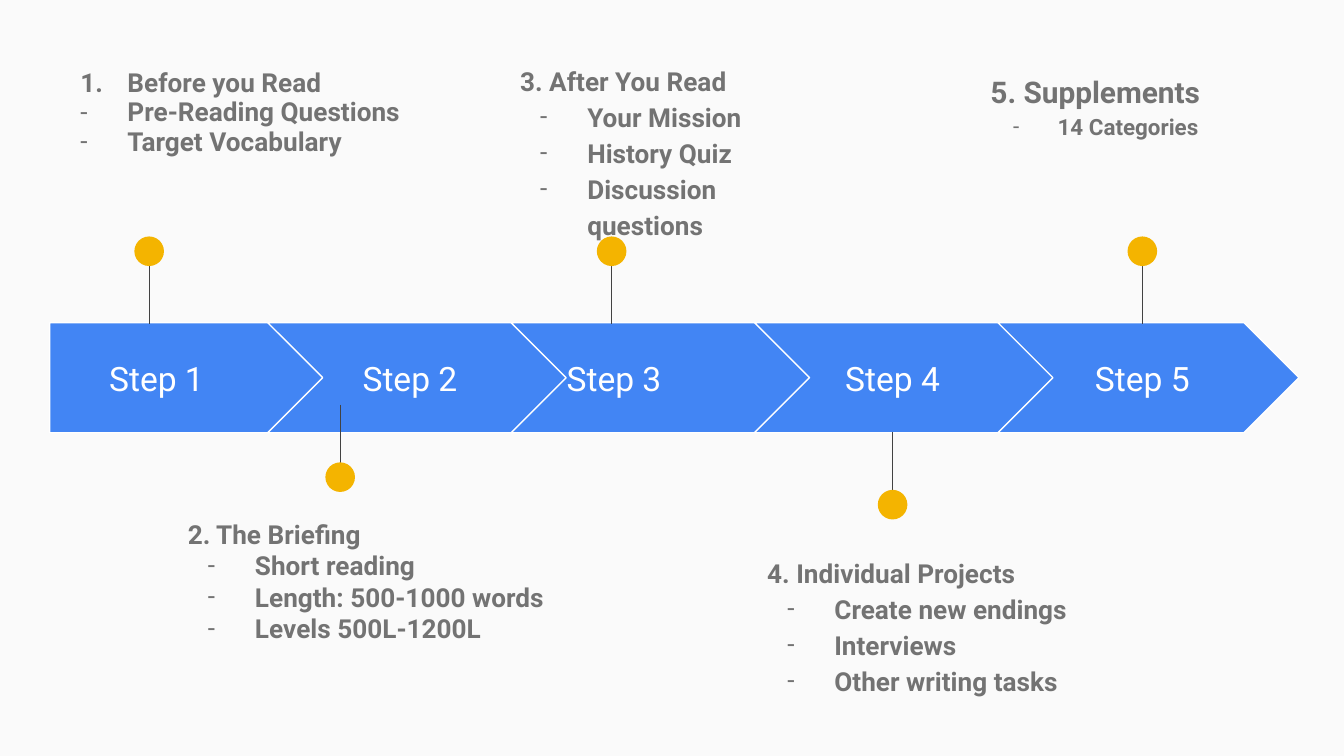
from dataclasses import dataclass

from lxml.etree import SubElement
from pptx import Presentation
from pptx.dml.color import RGBColor
from pptx.enum.shapes import MSO_CONNECTOR, MSO_SHAPE
from pptx.enum.text import MSO_ANCHOR, PP_ALIGN
from pptx.oxml.ns import qn
from pptx.util import Cm, Pt


@dataclass(frozen=True)
class Theme:
    back: str = "FAFAFA"
    blue: str = "4285F4"
    gold: str = "F4B400"
    white: str = "FFFFFF"
    stem: str = "424242"
    text: str = "737373"
    font: str = "Roboto"
    step: float = 18
    note: float = 14
    large: float = 16
    small: float = 12
    line: float = 0.75


THEME = Theme()
DOT = 0.56  # pin head, cm

# Per step: label x, label width, label align, pin x, pin top, pin points up, note
CENTER, LEFT = PP_ALIGN.CENTER, PP_ALIGN.LEFT
STEPS = [
    (0.94, 4.04, CENTER, 2.82, 4.47, True,
     dict(box=(0.89, 1.04, 6.96, 2.51), head="Before you Read", number=True, space=0.95,
          items=["Pre-Reading Questions", "Target Vocabulary"])),
    (5.92, 3.66, CENTER, 6.43, 7.65, False,
     dict(box=(3.3, 9.55, 8.64, 3.71), head="2. The Briefing", space=1.0,
          items=["Short reading", "Length: 500-1000 words", "Levels 500L-1200L"])),
    (10.46, 3.66, LEFT, 11.56, 4.47, True,
     dict(box=(9.58, 0.89, 6.22, 3.45), head="3. After You Read",
          items=["Your Mission", "History Quiz", "Discussion questions"])),
    (15.04, 3.66, CENTER, 16.87, 8.17, False,
     dict(box=(14.25, 10.19, 8.38, 2.77), head="4. Individual Projects",
          items=["Create new endings", "Interviews", "Other writing tasks"])),
    (19.76, 3.66, CENTER, 21.59, 4.47, True,
     dict(box=(18.47, 1.04, 6.32, 2.51), head="5. Supplements", items=["14 Categories"],
          sizes=(THEME.large, THEME.small), hang=0.84)),
]


def color(code):
    return RGBColor.from_string(code)


def paint(shape, fill, line=None):
    shape.shadow.inherit = False
    shape.fill.solid()
    shape.fill.fore_color.rgb = color(fill)
    if line:
        shape.line.color.rgb = color(line)
        shape.line.width = Pt(THEME.line)
    else:
        shape.line.fill.background()


def add_frame(slide, box, anchor=MSO_ANCHOR.TOP):
    frame = slide.shapes.add_textbox(*map(Cm, box)).text_frame
    frame.word_wrap = True
    frame.vertical_anchor = anchor
    frame.margin_left = frame.margin_right = Cm(0.25)
    frame.margin_top = frame.margin_bottom = Cm(0.25)
    return frame


def add_run(para, text, size, tone, bold=False):
    run = para.add_run()
    run.text = text
    font = run.font
    font.name, font.size, font.bold = THEME.font, Pt(size), bold
    font.color.rgb = color(tone)


def add_bullet(para, hang, number=False):
    props = para._p.get_or_add_pPr()
    props.set("marL", str(Cm(1.27)))
    props.set("indent", str(-Cm(hang)))
    SubElement(SubElement(props, qn("a:buClr")), qn("a:srgbClr"), val=THEME.text)
    SubElement(props, qn("a:buFont"), typeface=THEME.font)
    if number:
        SubElement(props, qn("a:buAutoNum"), type="arabicPeriod")
    else:
        SubElement(props, qn("a:buChar"), char="-")


def add_arrow(slide, box, kind):
    shape = slide.shapes.add_shape(kind, *map(Cm, box))
    shape.adjustments[0] = 0.5
    paint(shape, THEME.blue, THEME.white)


def add_label(slide, box, text, align):
    para = add_frame(slide, box, MSO_ANCHOR.MIDDLE).paragraphs[0]
    para.alignment = align
    add_run(para, text, THEME.step, THEME.white)


def add_pin(slide, box, upward):
    """Stem with a dot at its free end."""
    left, top, width, height = box
    mid, inset = left + width / 2, 0.1
    start = top + inset if upward else top
    group = slide.shapes.add_group_shape()
    stem = group.shapes.add_connector(
        MSO_CONNECTOR.STRAIGHT, Cm(mid), Cm(start), Cm(mid), Cm(start + height - inset))
    stem.line.color.rgb = color(THEME.stem)
    stem.line.width = Pt(THEME.line)
    SubElement(stem._element.spPr, qn("a:effectLst"))
    spot = top if upward else top + height - width
    dot = group.shapes.add_shape(MSO_SHAPE.OVAL, Cm(left), Cm(spot), Cm(width), Cm(width))
    paint(dot, THEME.gold)


def add_note(slide, box, head, items, number=False, space=1.15,
             sizes=(THEME.note, THEME.note), hang=0.89):
    frame = add_frame(slide, box)
    for row, text in enumerate([head, *items]):
        para = frame.add_paragraph() if row else frame.paragraphs[0]
        if row or number:
            add_bullet(para, hang, number and not row)
        para.line_spacing = space
        add_run(para, text, sizes[min(row, 1)], THEME.text, bold=True)


def add_step(slide, index, step):
    x, width, align, pin, top, upward, note = step
    # Arrow: the first is flat on the left, the rest interlock
    if index == 0:
        add_arrow(slide, (0.94, 6.1, 5.2, 2.08), MSO_SHAPE.PENTAGON)
    else:
        add_arrow(slide, (5.06 + 4.6 * (index - 1), 6.1, 5.69, 2.08), MSO_SHAPE.CHEVRON)
    add_label(slide, (x, 6.5, width, 1.3), f"Step {index + 1}", align)
    # Pin and its note
    add_pin(slide, (pin - DOT / 2, top, DOT, 1.65), upward)
    add_note(slide, **note)


def main():
    deck = Presentation()
    deck.slide_width, deck.slide_height = Cm(25.4), Cm(14.29)
    slide = deck.slides.add_slide(deck.slide_layouts[6])
    slide.background.fill.solid()
    slide.background.fill.fore_color.rgb = color(THEME.back)
    for index, step in enumerate(STEPS):
        add_step(slide, index, step)
    deck.save("out.pptx")


if __name__ == "__main__":
    main()
